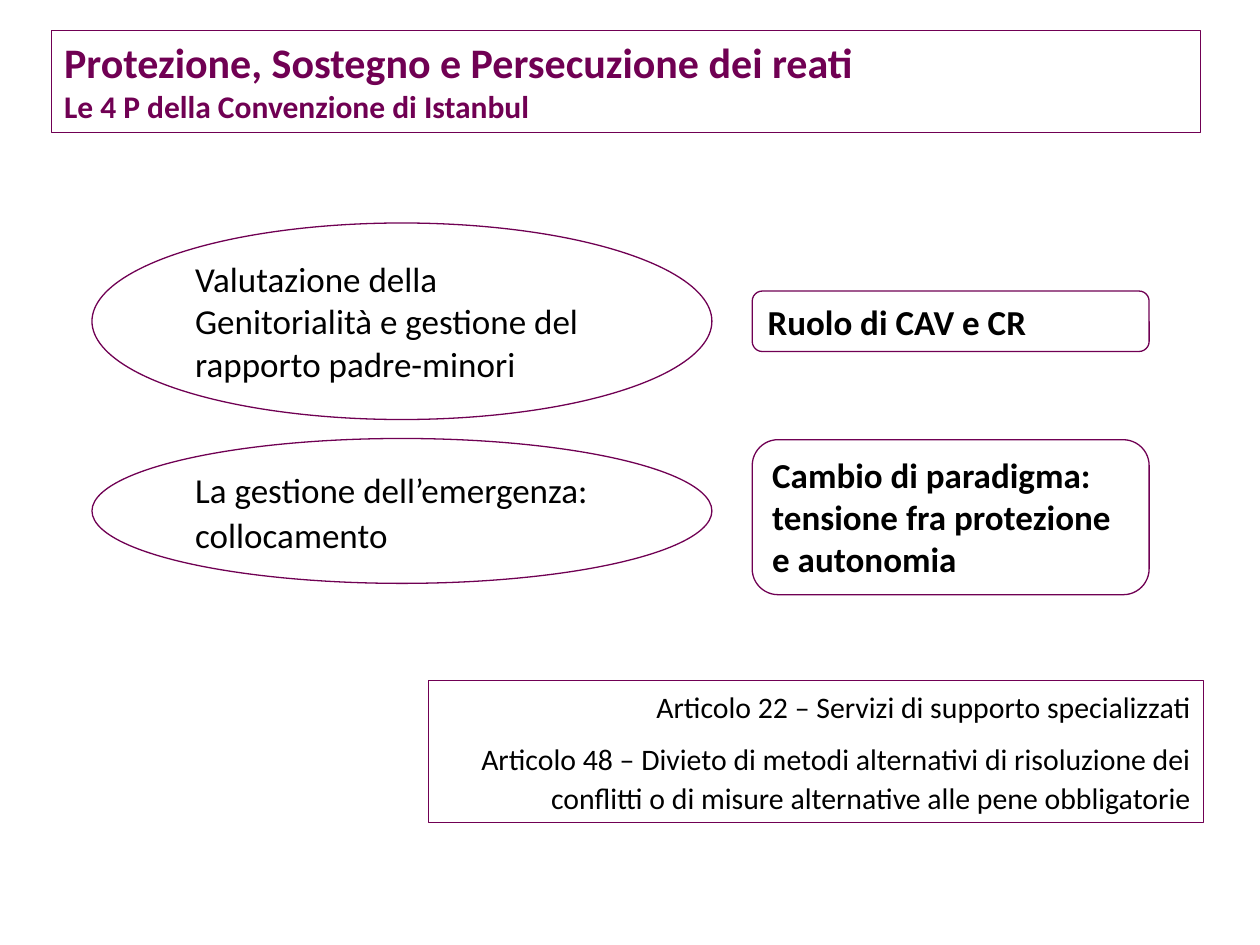
import pptx
import pptx.util
import pptx.dml.color
import pptx.enum.shapes
import pptx.enum.text
from dataclasses import dataclass

Inches = pptx.util.Inches
Shape = pptx.enum.shapes.MSO_SHAPE
Align = pptx.enum.text.PP_ALIGN
Color = pptx.dml.color.RGBColor


@dataclass(frozen=True)
class Theme:
    font: str = "Calibri"
    accent: Color = Color(0x70, 0x00, 0x53)
    text: Color = Color(0x00, 0x00, 0x00)
    fill: Color = Color(0xFF, 0xFF, 0xFF)
    title_size: int = 24
    subtitle_size: int = 18
    body_size: int = 20
    article_size: int = 17
    line_width: float = 0.75
    line_spacing: float = 1.07
    space_after: int = 8


class SlideBuilder:
    def __init__(self, slide, theme):
        self.slide = slide
        self.theme = theme

    def outline(self, kind, left, top, width, height, filled=True):
        shape = self.slide.shapes.add_shape(
            kind, Inches(left), Inches(top), Inches(width), Inches(height))
        shape.shadow.inherit = False
        if filled:
            shape.fill.solid()
            shape.fill.fore_color.rgb = self.theme.fill
        else:
            shape.fill.background()
        shape.line.color.rgb = self.theme.accent
        shape.line.width = pptx.util.Pt(self.theme.line_width)
        frame = shape.text_frame
        frame.word_wrap = True
        frame.auto_size = pptx.enum.text.MSO_AUTO_SIZE.SHAPE_TO_FIT_TEXT
        frame.vertical_anchor = pptx.enum.text.MSO_ANCHOR.TOP
        return frame

    def fill_paragraph(self, paragraph, text, size, color=None, bold=False,
                       alignment=Align.LEFT, spaced=False):
        paragraph.text = text
        paragraph.alignment = alignment
        if spaced:
            paragraph.line_spacing = self.theme.line_spacing
            paragraph.space_after = pptx.util.Pt(self.theme.space_after)
        paragraph.font.name = self.theme.font
        paragraph.font.size = pptx.util.Pt(size)
        paragraph.font.bold = bold
        paragraph.font.color.rgb = color or self.theme.text

    def title(self, title, subtitle):
        frame = self.outline(Shape.RECTANGLE, 0.41, 0.24, 9.12, 0.81, filled=False)
        self.fill_paragraph(frame.paragraphs[0], title, self.theme.title_size,
                            self.theme.accent, bold=True)
        self.fill_paragraph(frame.add_paragraph(), subtitle, self.theme.subtitle_size,
                            self.theme.accent, bold=True)

    def articles(self, first, second):
        frame = self.outline(Shape.RECTANGLE, 3.4, 5.4, 6.15, 1.13, filled=False)
        for paragraph, text in ((frame.paragraphs[0], first),
                                (frame.add_paragraph(), second)):
            self.fill_paragraph(paragraph, text, self.theme.article_size,
                                alignment=Align.RIGHT, spaced=True)

    def topic(self, text, top, height, spaced=False):
        frame = self.outline(Shape.OVAL, 0.73, top, 4.92, height)
        self.fill_paragraph(frame.paragraphs[0], text, self.theme.body_size,
                            spaced=spaced)

    def comment(self, text, top, height, alignment=Align.LEFT):
        frame = self.outline(Shape.ROUNDED_RECTANGLE, 5.97, top, 3.15, height)
        self.fill_paragraph(frame.paragraphs[0], text, self.theme.body_size,
                            bold=True, alignment=alignment)


def main():
    presentation = pptx.Presentation()
    presentation.slide_width = Inches(10)
    presentation.slide_height = Inches(7.5)
    slide = presentation.slides.add_slide(presentation.slide_layouts[6])
    builder = SlideBuilder(slide, Theme())
    builder.title("Protezione, Sostegno e Persecuzione dei reati",
                  "Le 4 P della Convenzione di Istanbul")
    builder.articles(
        "Articolo 22 – Servizi di supporto specializzati",
        "Articolo 48 – Divieto di metodi alternativi di risoluzione dei "
        "conflitti o di misure alternative alle pene obbligatorie")
    builder.topic("Valutazione della Genitorialità e gestione del "
                  "rapporto padre-minori", 1.77, 1.56)
    builder.topic("La gestione dell’emergenza: collocamento", 3.48, 1.15, spaced=True)
    builder.comment("Ruolo di CAV e CR", 2.31, 0.48, Align.JUSTIFY)
    builder.comment("Cambio di paradigma: tensione fra protezione e autonomia",
                    3.49, 1.23)
    presentation.save("out.pptx")


if __name__ == "__main__":
    main()
